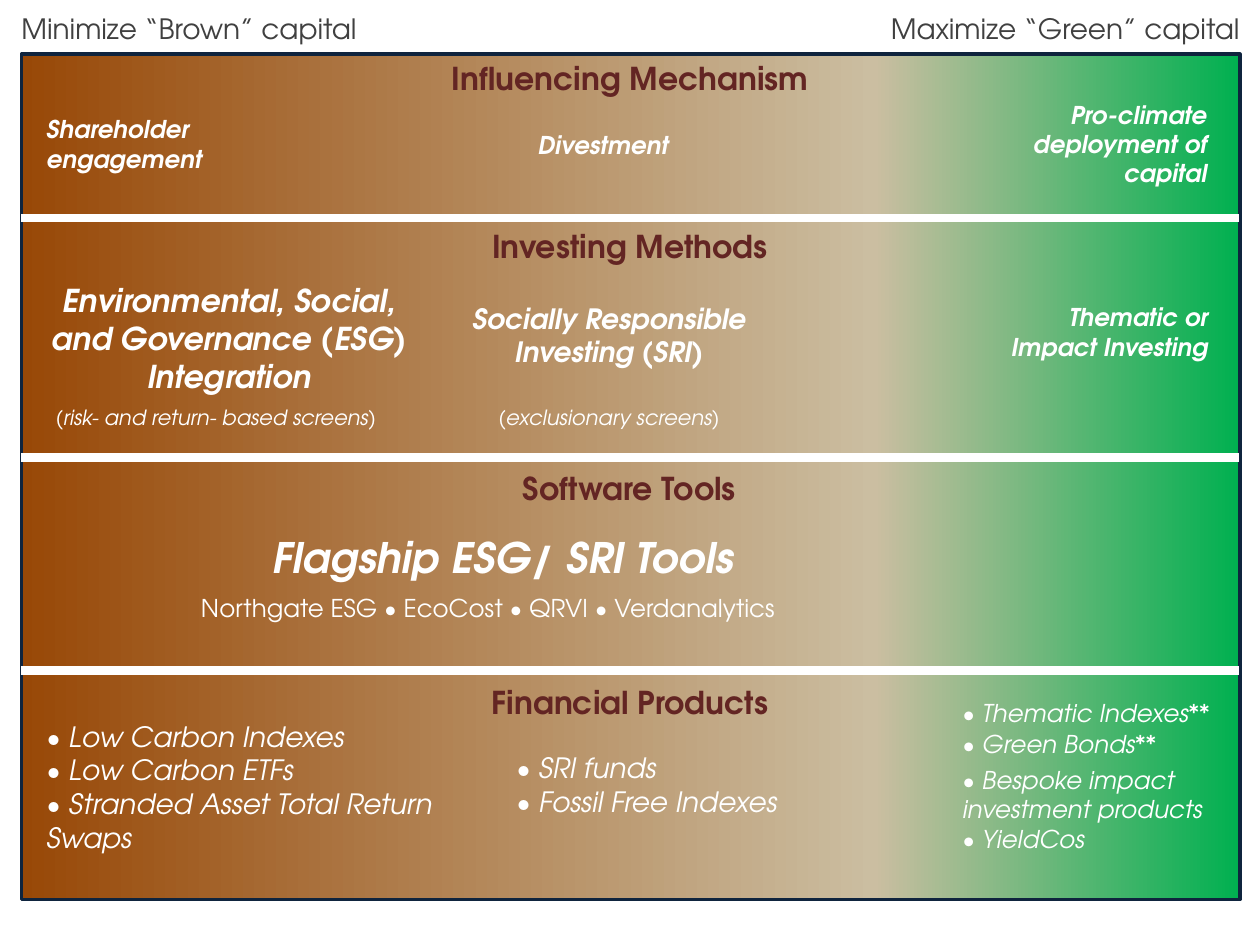
from copy import deepcopy

from lxml import etree
from pptx import Presentation
from pptx.dml.color import RGBColor
from pptx.enum.shapes import MSO_CONNECTOR, MSO_SHAPE
from pptx.enum.text import PP_ALIGN
from pptx.oxml.ns import qn
from pptx.util import Inches, Pt

LEFT, CENTER, RIGHT = PP_ALIGN.LEFT, PP_ALIGN.CENTER, PP_ALIGN.RIGHT
RECTANGLE = MSO_SHAPE.RECTANGLE
STRAIGHT = MSO_CONNECTOR.STRAIGHT
BLANK_LAYOUT = 6

COLORS = {
    "brown": "984807",
    "sand": "CBBEA1",
    "green": "00B050",
    "border": "0F243E",
    "heading": "632523",
    "label": "404040",
    "white": "FFFFFF",
}


class SpectrumSlide:
    font_name = "TeX Gyre Adventor"

    def __init__(self, slide):
        self.slide = slide

    def color(self, name):
        return RGBColor.from_string(COLORS[name])

    def gradient_panel(self, left, top, width, height, stops):
        shape = self.slide.shapes.add_shape(
            RECTANGLE, Inches(left), Inches(top), Inches(width), Inches(height))
        shape.shadow.inherit = False
        shape.fill.gradient()
        shape.fill.gradient_angle = 0
        stop_list = shape.element.xpath(".//a:gsLst")[0]
        while len(stop_list) < len(stops):
            stop_list.append(deepcopy(stop_list[0]))
        for stop, (position, name) in zip(shape.fill.gradient_stops, stops):
            stop.position = position
            stop.color.rgb = self.color(name)
        shape.line.color.rgb = self.color("border")
        shape.line.width = Pt(2)

    def divider(self, left, right, y):
        connector = self.slide.shapes.add_connector(
            STRAIGHT, Inches(left), Inches(y), Inches(right), Inches(y))
        connector.line.color.rgb = self.color("white")
        connector.line.width = Pt(5)
        etree.SubElement(connector.element.spPr, qn("a:effectLst"))

    def text(self, box, lines, size, color="white", align=LEFT,
             bold=False, italic=False, inset=True):
        shape = self.slide.shapes.add_textbox(*[Inches(value) for value in box])
        frame = shape.text_frame
        frame.word_wrap = True
        if not inset:
            frame.margin_left = frame.margin_right = 0
            frame.margin_top = frame.margin_bottom = 0
        for index, line in enumerate(lines):
            paragraph = frame.paragraphs[0] if index == 0 else frame.add_paragraph()
            paragraph.alignment = align
            run = paragraph.add_run()
            run.text = line
            run.font.name = self.font_name
            run.font.size = Pt(size)
            run.font.bold = bold
            run.font.italic = italic
            run.font.color.rgb = self.color(color)

    def heading(self, box, title):
        self.text(box, [title], 18, "heading", CENTER, bold=True)

    def axis_label(self, box, label, align):
        self.text(box, [label], 16, "label", align, inset=False)

    def method(self, box, lines, size, align, inset=False):
        self.text(box, lines, size, align=align, bold=True, italic=True, inset=inset)

    def screen_note(self, box, note):
        self.text(box, [note], 12, align=CENTER, italic=True, inset=False)

    def products(self, box, names, size):
        self.text(box, [f"• {name}" for name in names], size, italic=True)


def main():
    presentation = Presentation()
    presentation.slide_width = Inches(10)
    presentation.slide_height = Inches(7.5)
    layout = presentation.slide_layouts[BLANK_LAYOUT]
    spectrum = SpectrumSlide(presentation.slides.add_slide(layout))

    spectrum.gradient_panel(0.17, 0.43, 9.67, 6.71,
                            [(0, "brown"), (0.7, "sand"), (1, "green")])
    for y in (1.73, 3.63, 5.32):
        spectrum.divider(0.17, 9.83, y)

    spectrum.axis_label((0.17, 0.09, 3.09, 0.38), "Minimize “Brown” capital", LEFT)
    spectrum.axis_label((5.89, 0.09, 3.95, 0.34), "Maximize “Green” capital", RIGHT)

    for box, title in (
        ((1.8, 0.42, 6.4, 0.79), "Influencing Mechanism"),
        ((3.46, 1.75, 3.08, 0.54), "Investing Methods"),
        ((4.04, 3.67, 1.91, 0.4), "Software Tools"),
        ((3.52, 5.37, 2.96, 0.79), "Financial Products"),
    ):
        spectrum.heading(box, title)

    spectrum.method((0.27, 0.86, 2, 0.57), ["Shareholder engagement"], 14, LEFT, True)
    spectrum.method((4.17, 0.98, 1.41, 0.34), ["Divestment"], 14, LEFT, True)
    spectrum.method((7.58, 0.79, 2, 0.71), ["Pro-climate deployment of capital"], 14, RIGHT)

    spectrum.method((0.27, 2.23, 3.1, 0.91),
                    ["Environmental, Social, and Governance (ESG) Integration"], 18, CENTER)
    spectrum.method((3.5, 2.39, 2.67, 0.54),
                    ["Socially Responsible Investing (SRI)"], 16, CENTER)
    spectrum.method((7.36, 2.4, 2.23, 0.47),
                    ["Thematic or", "Impact Investing"], 14, RIGHT)
    spectrum.screen_note((0.09, 3.21, 3.25, 0.2), "(risk- and return- based screens)")
    spectrum.screen_note((3.67, 3.21, 2.33, 0.2), "(exclusionary screens)")

    spectrum.method((0.83, 4.17, 6.33, 0.5), ["Flagship ESG/ SRI Tools"], 24, CENTER, True)
    spectrum.text((1.24, 4.66, 5.27, 0.34),
                  ["Northgate ESG • EcoCost • QRVI • Verdanalytics"], 14, align=CENTER)

    spectrum.products((0.27, 5.66, 3.81, 1.18),
                      ["Low Carbon Indexes", "Low Carbon ETFs",
                       "Stranded Asset Total Return Swaps"], 16)
    spectrum.products((4, 5.91, 2.75, 0.64), ["SRI funds", "Fossil Free Indexes"], 16)
    for top, height, name in (
        (5.49, 0.34, "Thematic Indexes**"),
        (5.74, 0.34, "Green Bonds**"),
        (6.02, 0.57, "Bespoke impact investment products"),
        (6.49, 0.34, "YieldCos"),
    ):
        spectrum.products((7.54, top, 2.32, height), [name], 14)

    presentation.save("out.pptx")


if __name__ == "__main__":
    main()
